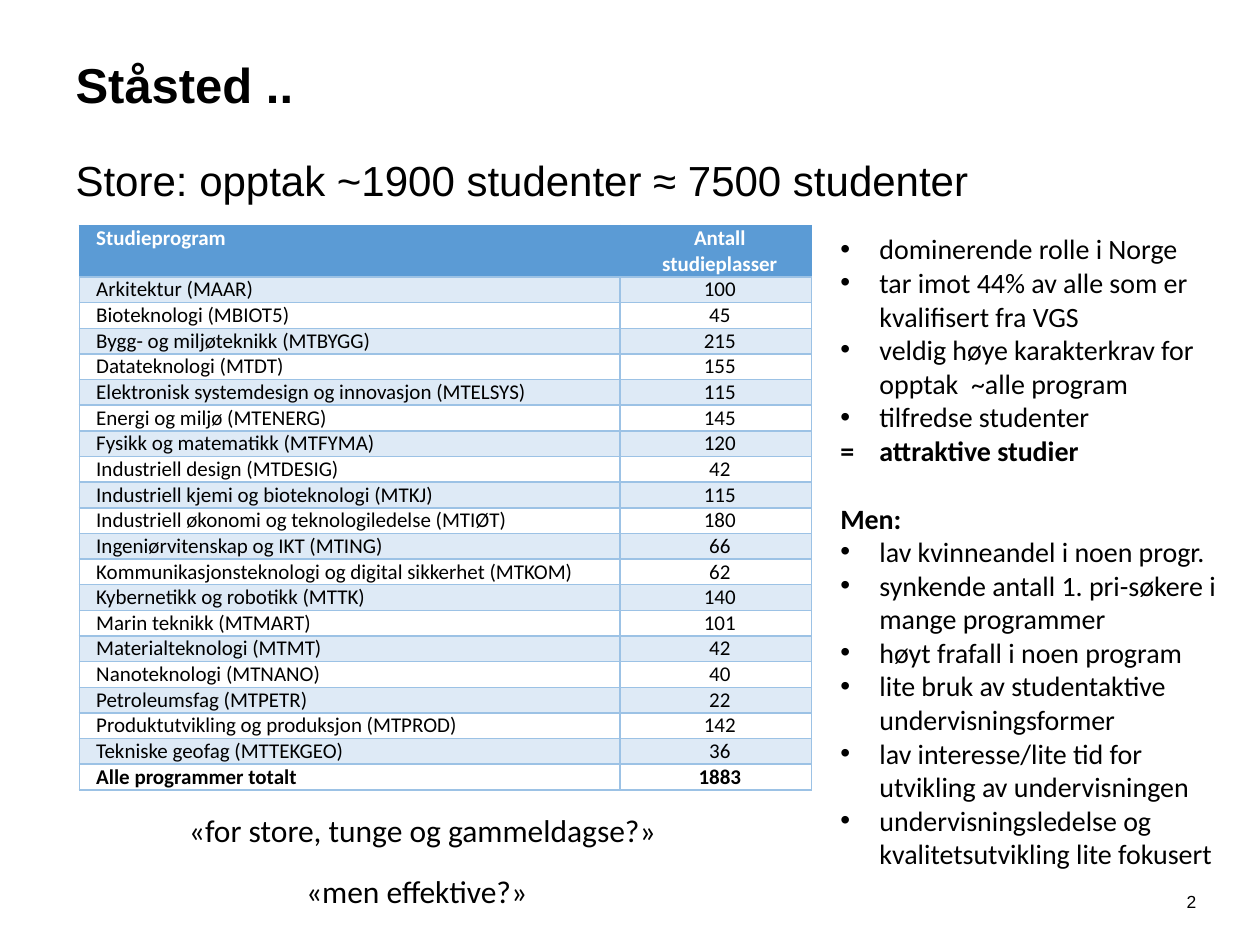
from dataclasses import dataclass

from pptx import Presentation
from pptx.dml.color import RGBColor
from pptx.enum.text import MSO_ANCHOR, PP_ALIGN
from pptx.oxml.ns import qn
from pptx.util import Cm, Pt
from lxml.etree import SubElement

BLACK = RGBColor(0x00, 0x00, 0x00)
WHITE = RGBColor(0xFF, 0xFF, 0xFF)
HEADER_BLUE = RGBColor(0x5B, 0x9B, 0xD5)
BAND_BLUE = RGBColor(0xDE, 0xEA, 0xF6)
BORDER_BLUE = RGBColor(0x9C, 0xC2, 0xE5)


@dataclass(frozen=True)
class Frame:
    left: float
    top: float
    width: float
    height: float


@dataclass(frozen=True)
class Programme:
    name: str
    places: str


@dataclass(frozen=True)
class Point:
    text: str
    bullet: str = "•"
    bold: bool = False
    hanging: float = 0.79
    gap: float = 0


@dataclass(frozen=True)
class Caption:
    text: str
    frame: Frame
    size: int = 18
    font: str = "Calibri"
    align: PP_ALIGN = PP_ALIGN.LEFT
    wrap: bool = False


HEADING = Programme("Studieprogram", "Antall studieplasser")
PROGRAMMES = [
    Programme("Arkitektur (MAAR)", "100"),
    Programme("Bioteknologi (MBIOT5)", "45"),
    Programme("Bygg- og miljøteknikk (MTBYGG)", "215"),
    Programme("Datateknologi (MTDT)", "155"),
    Programme("Elektronisk systemdesign og innovasjon (MTELSYS)", "115"),
    Programme("Energi og miljø (MTENERG)", "145"),
    Programme("Fysikk og matematikk (MTFYMA)", "120"),
    Programme("Industriell design (MTDESIG)", "42"),
    Programme("Industriell kjemi og bioteknologi (MTKJ)", "115"),
    Programme("Industriell økonomi og teknologiledelse (MTIØT)", "180"),
    Programme("Ingeniørvitenskap og IKT (MTING)", "66"),
    Programme("Kommunikasjonsteknologi og digital sikkerhet (MTKOM)", "62"),
    Programme("Kybernetikk og robotikk (MTTK)", "140"),
    Programme("Marin teknikk (MTMART)", "101"),
    Programme("Materialteknologi (MTMT)", "42"),
    Programme("Nanoteknologi (MTNANO)", "40"),
    Programme("Petroleumsfag (MTPETR)", "22"),
    Programme("Produktutvikling og produksjon (MTPROD)", "142"),
    Programme("Tekniske geofag (MTTEKGEO)", "36"),
]
TOTAL = Programme("Alle programmer totalt", "1883")

POINTS = [
    Point("dominerende rolle i Norge"),
    Point("tar imot 44% av alle som er kvalifisert fra VGS"),
    Point("veldig høye karakterkrav for opptak  ~alle program"),
    Point("tilfredse studenter"),
    Point("=\tattraktive studier", bullet="", bold=True),
    Point("Men:", bullet="", bold=True, hanging=0, gap=19.5),
    Point("lav kvinneandel i noen progr."),
    Point("synkende antall 1. pri-søkere i mange programmer"),
    Point("høyt frafall i noen program"),
    Point("lite bruk av studentaktive undervisningsformer"),
    Point("lav interesse/lite tid for utvikling av undervisningen"),
    Point("undervisningsledelse og kvalitetsutvikling lite fokusert"),
]

CAPTIONS = [
    Caption("«for store, tunge og gammeldagse?»", Frame(3.56, 16.23, 10.11, 1.02)),
    Caption("«men effektive?»", Frame(5.92, 17.45, 5.18, 1.02)),
    Caption("2", Frame(23.55, 17.83, 0.94, 1.02), size=10, font="Arial",
            align=PP_ALIGN.CENTER, wrap=True),
]


def place(shape, frame: Frame) -> None:
    shape.left, shape.top = Cm(frame.left), Cm(frame.top)
    shape.width, shape.height = Cm(frame.width), Cm(frame.height)


def write(para, text: str, *, size: float, font: str = "Calibri",
          color: RGBColor = BLACK, bold: bool = False,
          align: PP_ALIGN = PP_ALIGN.LEFT, bullet: str = "",
          margin: float = 0, hanging: float = 0, gap: float = 0) -> None:
    properties = para._p.get_or_add_pPr()
    properties.set("marL", str(Cm(margin + hanging)))
    properties.set("indent", str(-Cm(hanging)))
    if bullet:
        SubElement(properties, qn("a:buFont"), typeface="Arial")
        SubElement(properties, qn("a:buChar"), char=bullet)
    else:
        SubElement(properties, qn("a:buNone"))
    para.alignment = align
    para.space_before = Pt(gap)
    span = para.add_run()
    span.text = text
    span.font.size = Pt(size)
    span.font.name = font
    span.font.bold = bold
    span.font.color.rgb = color


def add_box(page, frame: Frame, wrap: bool = True):
    box = page.shapes.add_textbox(Cm(0), Cm(0), Cm(1), Cm(1))
    place(box, frame)
    box.text_frame.word_wrap = wrap
    return box.text_frame


def set_borders(cell, color: RGBColor) -> None:
    properties = cell._tc.get_or_add_tcPr()
    for position, side in enumerate(("lnL", "lnR", "lnT", "lnB")):
        line = SubElement(properties, qn(f"a:{side}"), w=str(Pt(1)))
        fill = SubElement(line, qn("a:solidFill"))
        SubElement(fill, qn("a:srgbClr"), val=str(color))
        properties.insert(position, line)


def fill_row(table, index: int, programme: Programme) -> None:
    header = index == 0
    bold = header or programme is TOTAL
    for column, (text, align) in enumerate((
            (programme.name, PP_ALIGN.JUSTIFY),
            (programme.places, PP_ALIGN.CENTER))):
        cell = table.cell(index, column)
        cell.margin_left = cell.margin_right = Cm(0.18)
        cell.margin_top = cell.margin_bottom = Cm(0)
        if header or index % 2:
            cell.fill.solid()
            cell.fill.fore_color.rgb = HEADER_BLUE if header else BAND_BLUE
        else:
            cell.fill.background()
        set_borders(cell, HEADER_BLUE if header else BORDER_BLUE)
        write(cell.text_frame.paragraphs[0], text, size=12, bold=bold,
              color=WHITE if header else BLACK, align=align, margin=0.16)


def add_programme_table(page) -> None:
    rows = [HEADING, *PROGRAMMES, TOTAL]
    row_height = Cm(0.51)
    table = page.shapes.add_table(len(rows), 2, Cm(1.6), Cm(4.55), Cm(14.76),
                                  row_height * (len(rows) + 1)).table
    table.first_row = table.horz_banding = False
    table.columns[0].width, table.columns[1].width = Cm(10.9), Cm(3.86)
    for index, programme in enumerate(rows):
        table.rows[index].height = row_height if index else row_height * 2
        fill_row(table, index, programme)


def add_points(page) -> None:
    text = add_box(page, Frame(16.69, 4.55, 8.15, 13.26))
    for index, point in enumerate(POINTS):
        para = text.add_paragraph() if index else text.paragraphs[0]
        write(para, point.text, size=16, bold=point.bold, bullet=point.bullet,
              hanging=point.hanging, gap=point.gap)


def main() -> None:
    deck = Presentation()
    deck.slide_width, deck.slide_height = Cm(25.4), Cm(19.05)
    page = deck.slides.add_slide(deck.slide_layouts[1])

    title, body = page.placeholders
    place(title, Frame(1.27, 0.76, 22.86, 1.85))
    title.text_frame.vertical_anchor = MSO_ANCHOR.MIDDLE
    write(title.text_frame.paragraphs[0], "Ståsted ..", size=28, font="Arial", bold=True)
    place(body, Frame(1.27, 2.82, 22.86, 12.57))
    body.text_frame.margin_top = Cm(0.29)
    write(body.text_frame.paragraphs[0],
          "Store: opptak ~1900 studenter ≈ 7500 studenter", size=24, font="Arial")

    add_programme_table(page)
    add_points(page)
    for caption in CAPTIONS:
        text = add_box(page, caption.frame, caption.wrap)
        write(text.paragraphs[0], caption.text, size=caption.size,
              font=caption.font, align=caption.align)
    deck.save("out.pptx")


if __name__ == "__main__":
    main()
